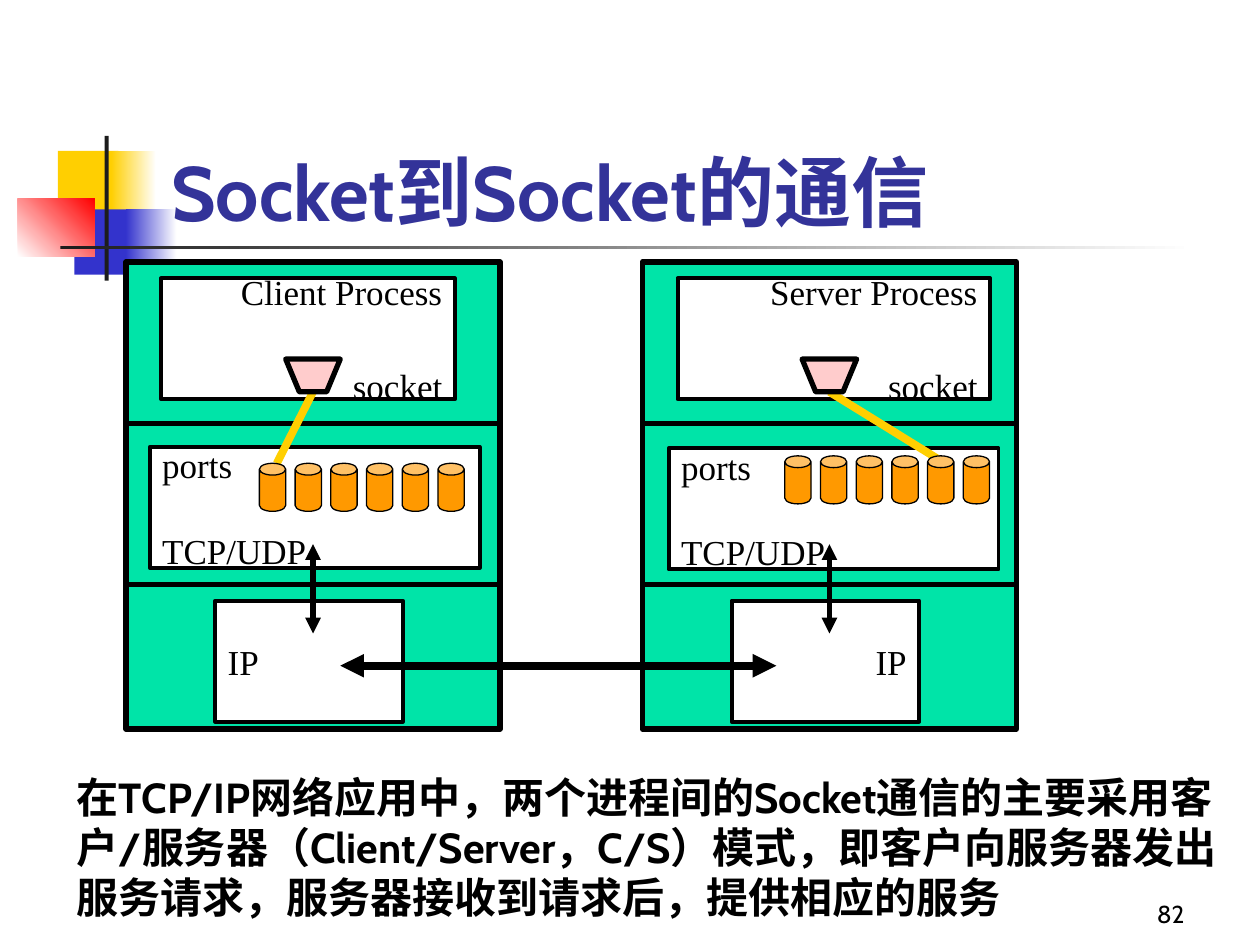
from lxml.etree import SubElement
from pptx import Presentation
from pptx.dml.color import RGBColor
from pptx.enum.shapes import MSO_CONNECTOR, MSO_SHAPE
from pptx.enum.text import MSO_ANCHOR, MSO_AUTO_SIZE, PP_ALIGN
from pptx.oxml.ns import qn
from pptx.util import Cm, Pt

COLORS = {
    "black": "000000", "white": "FFFFFF", "ink": "1C1C1C", "title": "333399",
    "yellow": "FFCF01", "blue": "3333CC", "red": "FF0000",
    "panel": "00E4A8", "port": "FF9900", "socket": "FFCCCC",
}
LEFT, RIGHT = PP_ALIGN.LEFT, PP_ALIGN.RIGHT


def rgb(name):
    return RGBColor.from_string(COLORS[name])


def style(sp, fill, line=None):
    """Give a shape a plain fill and an optional black outline."""
    sp.shadow.inherit = False
    sp.fill.solid()
    sp.fill.fore_color.rgb = rgb(fill)
    if line:
        sp.line.color.rgb = rgb("black")
        sp.line.width = Pt(line)
    else:
        sp.line.fill.background()
    return sp


def add_block(s, x, y, w, h, fill, line=None, kind=MSO_SHAPE.RECTANGLE):
    sp = s.shapes.add_shape(kind, Cm(x), Cm(y), Cm(w), Cm(h))
    return style(sp, fill, line)


def add_fade(s, x, y, w, h, start, end, angle=0):
    sp = add_block(s, x, y, w, h, start)
    sp.fill.gradient()
    sp.fill.gradient_angle = angle
    for stop, name, position in zip(sp.fill.gradient_stops, (start, end), (0, 1)):
        stop.color.rgb = rgb(name)
        stop.position = position


def add_line(s, x1, y1, x2, y2, width, color="black", arrows=False):
    c = s.shapes.add_connector(MSO_CONNECTOR.STRAIGHT,
                               Cm(x1), Cm(y1), Cm(x2), Cm(y2))
    c.line.color.rgb = rgb(color)
    c.line.width = Pt(width)
    if arrows:
        ln = c.line._get_or_add_ln()
        for tag in ("a:headEnd", "a:tailEnd"):
            SubElement(ln, qn(tag)).set("type", "triangle")
    SubElement(c._element.spPr, qn("a:effectLst"))


def write(sp, *lines, size=20, font="Times New Roman", color="black", bold=False,
          align=LEFT, anchor=MSO_ANCHOR.MIDDLE, gap=0):
    """Write one paragraph per line, with gap points between them."""
    tf = sp.text_frame
    tf.word_wrap = True
    tf.vertical_anchor = anchor
    for i, line in enumerate(lines):
        p = tf.add_paragraph() if i else tf.paragraphs[0]
        p.alignment = align
        p.space_before = Pt(gap if i else 0)
        r = p.add_run()
        r.text = line
        r.font.size, r.font.name, r.font.bold = Pt(size), font, bold
        r.font.color.rgb = rgb(color)
        SubElement(r._r.get_or_add_rPr(), qn("a:ea")).set("typeface", font)
    return tf


def add_text(s, x, y, w, h, text, **fmt):
    sp = s.shapes.add_textbox(Cm(x), Cm(y), Cm(w), Cm(h))
    return write(sp, text, font="Cabin", **fmt)


def draw_ornament(s, x, y):
    """Coloured squares and crossing bars beside the title."""
    add_block(s, x + 0.81, y + 0.3, 1.22, 1.32, "yellow")
    add_fade(s, x + 1.88, y + 0.3, 0.91, 1.32, "yellow", "white")
    add_block(s, x + 1.14, y + 1.48, 1.17, 1.32, "blue")
    add_fade(s, x + 2.18, y + 1.48, 1.02, 1.32, "blue", "white")
    add_fade(s, x, y + 1.27, 1.55, 1.17, "white", "red", angle=45)
    add_block(s, x + 1.75, y, 0.08, 2.92, "ink")
    add_fade(s, x + 0.86, y + 2.21, 22.86, 0.08, "ink", "white")


def draw_socket(s, x, y, w, h):
    inset = w / 4
    corners = [(x, y), (x + inset, y + h), (x + w - inset, y + h), (x + w, y)]
    points = [(Cm(px), Cm(py)) for px, py in corners]
    fb = s.shapes.build_freeform(*points[0])
    fb.add_line_segments(points[1:], close=True)
    style(fb.convert_to_shape(), "socket", 3)


def draw_host(s, x, y, w, h, process, process_w, transport, ports, used_port, ip_align):
    """One host: process, transport and IP layers in a green panel.

    transport and ports are offsets from the panel's top left corner.
    """
    add_block(s, x, y, w, h, "panel", 3)
    for dy in (3.25, 6.51):
        add_line(s, x, y + dy, x + w, y + dy, 3)

    # Layer boxes
    box_h = 2.44
    sp = add_block(s, x + 0.71, y + 0.33, process_w, box_h, "white", 2.25)
    write(sp, process, "socket", align=RIGHT, gap=29.5)
    sp = add_block(s, x + transport[0], y + transport[1], 6.65, box_h, "white", 2.25)
    write(sp, "ports", "TCP/UDP", gap=25)
    sp = add_block(s, x + 1.8, y + 6.83, 3.78, box_h, "white", 2.25)
    write(sp, "IP", align=ip_align)

    # Socket's link to its port, and the arrow between transport and IP
    axis = x + w / 2
    port_w, port_h, step = 0.53, 0.97, 0.72
    port_x, port_y = x + ports[0], y + ports[1]
    add_line(s, axis, y + 2.62, port_x + used_port * step + 0.35, y + 4.06,
             4.5, "yellow")
    add_line(s, axis, y + 5.69, axis, y + 7.49, 3, arrows=True)

    # Ports and socket
    for i in range(6):
        can = add_block(s, port_x + i * step, port_y, port_w, port_h,
                        "port", 0.75, MSO_SHAPE.CAN)
        can.adjustments[0] = 0.45
    draw_socket(s, axis - 0.55, y + 1.96, 1.1, 0.66)


def main():
    prs = Presentation()
    prs.slide_width, prs.slide_height = Cm(25.4), Cm(19.05)
    s = prs.slides.add_slide(prs.slide_layouts[6])

    # Heading
    draw_ornament(s, 0.36, 2.74)
    add_text(s, 3.2, 1.73, 21.64, 3.18, "Socket到Socket的通信", size=44,
             color="title", bold=True, anchor=MSO_ANCHOR.BOTTOM)

    # Two hosts and the network link between them
    draw_host(s, 2.54, 5.28, 7.54, 9.42, "Client Process", 5.92,
              transport=(0.48, 3.73), ports=(2.69, 4.06), used_port=0, ip_align=LEFT)
    draw_host(s, 12.95, 5.28, 7.54, 9.42, "Server Process", 6.3,
              transport=(0.53, 3.76), ports=(2.87, 3.91), used_port=4, ip_align=RIGHT)
    add_line(s, 6.86, 13.42, 15.65, 13.42, 4.5, arrows=True)

    # Explanation and slide number
    tf = add_text(s, 1.3, 15.42, 23.6, 3.3,
                  "在TCP/IP网络应用中，两个进程间的Socket通信的主要采用"
                  "客户/服务器（Client/Server，C/S）模式，即客户向服务器发出服务请求，"
                  "服务器接收到请求后，提供相应的服务",
                  size=24, bold=True, anchor=MSO_ANCHOR.TOP)
    tf.auto_size = MSO_AUTO_SIZE.SHAPE_TO_FIT_TEXT
    add_text(s, 18.85, 17.58, 5.28, 1.27, "82", size=14, align=RIGHT,
             anchor=MSO_ANCHOR.BOTTOM)

    prs.save("out.pptx")


if __name__ == "__main__":
    main()
